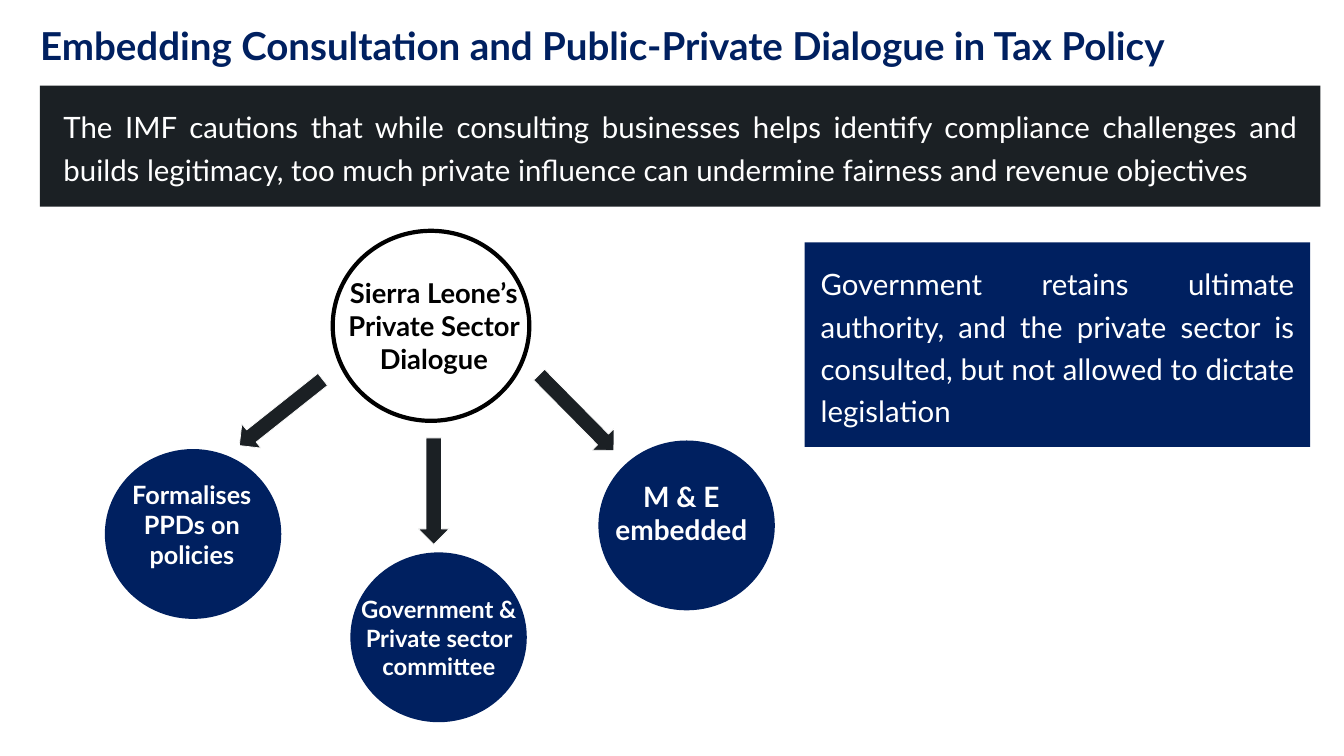
from pptx import Presentation
from pptx.dml.color import RGBColor
from pptx.enum.shapes import MSO_SHAPE
from pptx.enum.text import PP_ALIGN
from pptx.util import Inches, Pt

NAVY = RGBColor(0x00, 0x20, 0x60)
DARK = RGBColor(0x1B, 0x20, 0x24)
WHITE = RGBColor(0xFF, 0xFF, 0xFF)
BLACK = RGBColor(0x00, 0x00, 0x00)
RECT, OVAL, ARROW = MSO_SHAPE.RECTANGLE, MSO_SHAPE.OVAL, MSO_SHAPE.LEFT_ARROW
LEFT, CENTER, JUSTIFY = PP_ALIGN.LEFT, PP_ALIGN.CENTER, PP_ALIGN.JUSTIFY

deck = Presentation()
deck.slide_width, deck.slide_height = Inches(26.66), Inches(15)
slide = deck.slides.add_slide(deck.slide_layouts[6])


def add_text(text, box, size, color=WHITE, bold=False, align=CENTER, spacing=None):
    frame = slide.shapes.add_textbox(*map(Inches, box)).text_frame
    frame.word_wrap = True
    para = frame.paragraphs[0]
    para.alignment = align
    if spacing:
        para.line_spacing = spacing
    run = para.add_run()
    run.text = text
    run.font.name = "Lato"
    run.font.size = Pt(size)
    run.font.bold = bold
    run.font.color.rgb = color


def add_form(kind, box, fill=None, line=None, width=1, turn=0):
    form = slide.shapes.add_shape(kind, *map(Inches, box))
    form.shadow.inherit = False
    form.rotation = turn
    if fill is None:
        form.fill.background()
    else:
        form.fill.solid()
        form.fill.fore_color.rgb = fill
    if line is None:
        form.line.fill.background()
    else:
        form.line.color.rgb = line
        form.line.width = Pt(width)


# Title and banner
add_text("Embedding Consultation and Public-Private Dialogue in Tax Policy",
         (0.7, 0.39, 24.63, 1.03), 55, color=NAVY, bold=True, align=LEFT)
add_form(RECT, (0.79, 1.7, 25.4, 2.4), fill=DARK)
add_text("The IMF cautions that while consulting businesses helps identify compliance "
         "challenges and builds legitimacy, too much private influence can undermine "
         "fairness and revenue objectives",
         (1.16, 1.98, 24.67, 1.71), 42, align=JUSTIFY, spacing=1.2)

# Hub with arrows to its three branches
add_form(OVAL, (6.6, 4.58, 3.9, 3.77), line=BLACK, width=6)
add_text("Sierra Leone’s Private Sector Dialogue", (6.71, 5.44, 3.79, 2.12), 39,
         color=BLACK, bold=True)
for left, top, turn in [(4.52, 7.88, 321.6), (7.55, 9.44, 270), (10.38, 7.88, 225.4)]:
    add_form(ARROW, (left, top, 2.11, 0.61), fill=DARK, line=WHITE, turn=turn)

# Each branch: circle corner, text corner, text height, size
branches = [
    ("Formalises PPDs on policies", (2.08, 8.91), (1.91, 9.46), 1.92, 36),
    ("Government & Private sector committee", (6.95, 10.96), (6.81, 11.75), 1.82, 34),
    ("M & E embedded", (11.87, 8.74), (11.62, 9.46), 1.45, 40),
]
for text, disc, label, height, size in branches:
    add_form(OVAL, (*disc, 3.5, 3.37), fill=NAVY)
    add_text(text, (*label, 3.79, height), size, bold=True)

# Side note
add_form(RECT, (15.96, 4.81, 10.03, 4.06), fill=NAVY)
add_text("Government retains ultimate authority, and the private sector is consulted, "
         "but not allowed to dictate legislation",
         (16.18, 5.1, 9.59, 3.41), 42, align=JUSTIFY, spacing=1.2)

deck.save("out.pptx")
